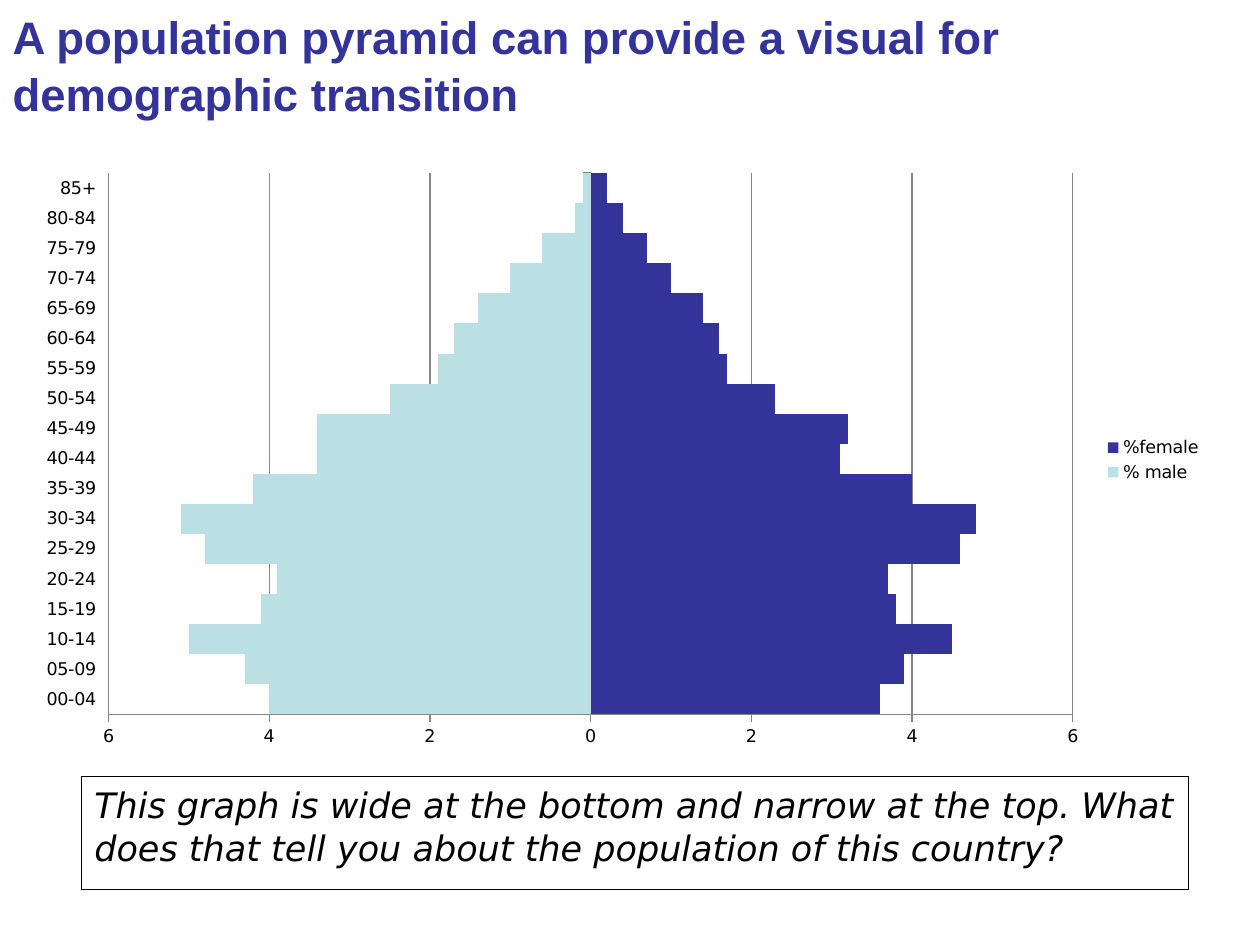
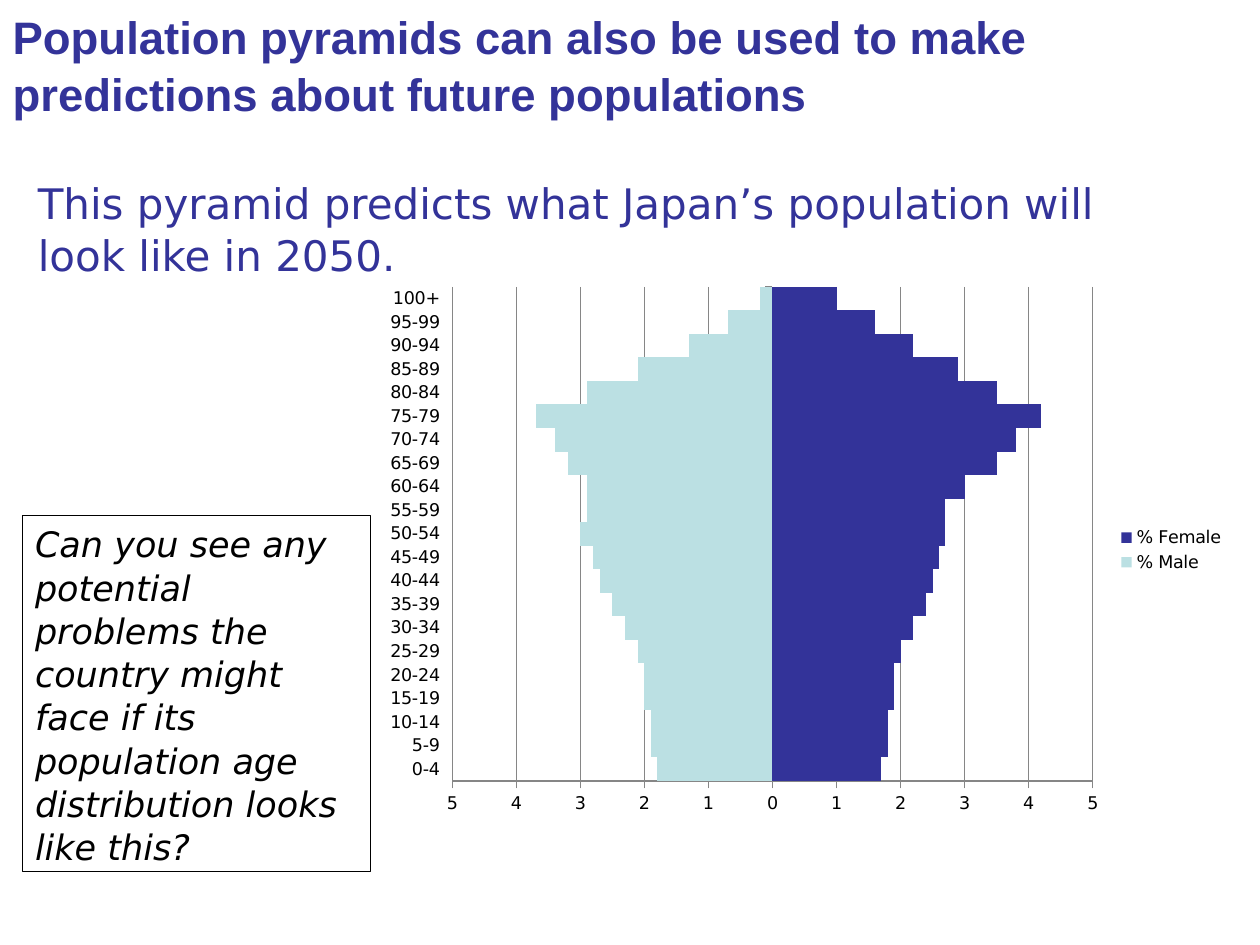
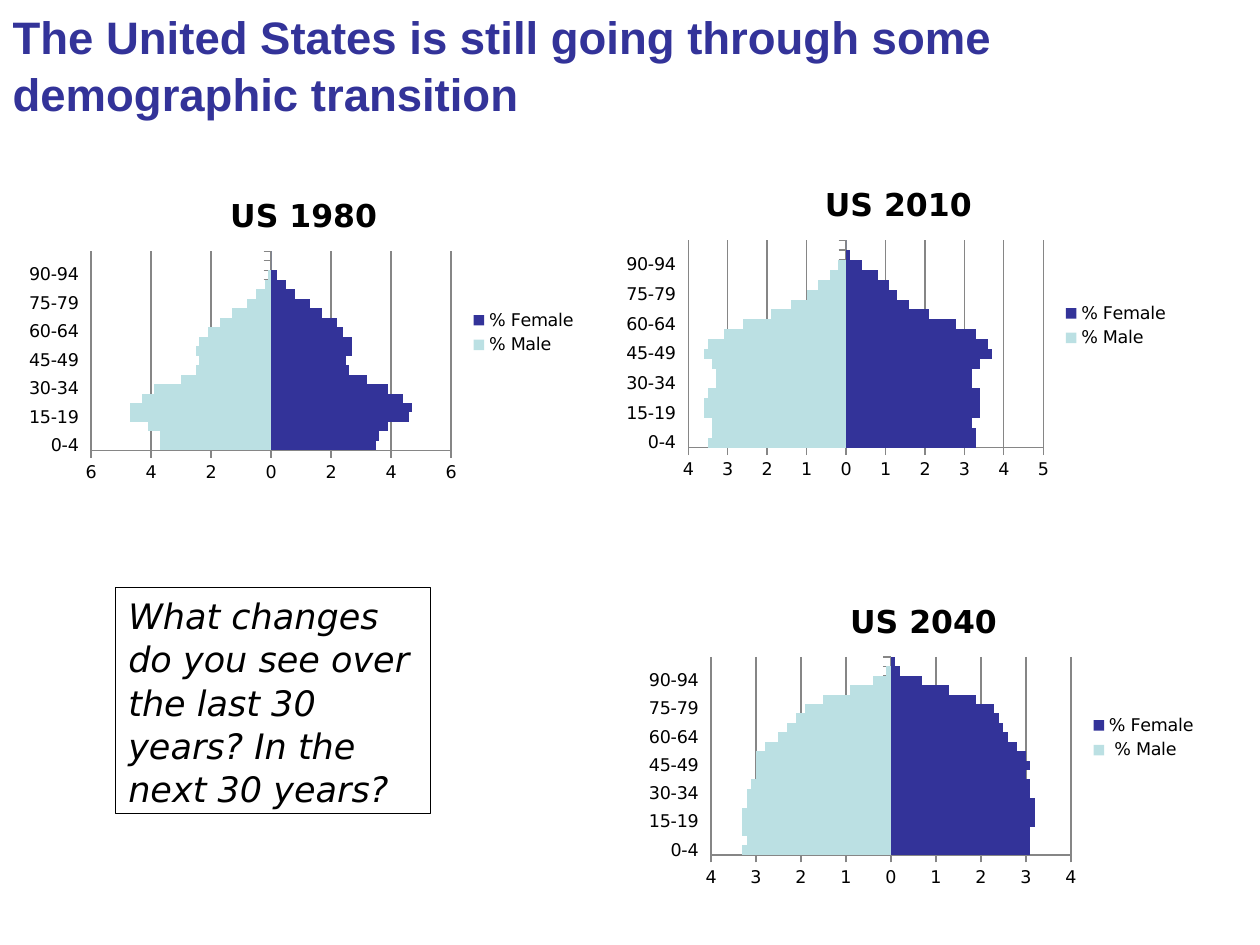
from dataclasses import dataclass

from pptx import Presentation
from pptx import util as u
from pptx.chart.data import CategoryChartData
from pptx.dml.color import RGBColor
from pptx.enum import chart as ch, shapes, text


@dataclass(frozen=True)
class Theme:
    navy: RGBColor = RGBColor(0x33, 0x33, 0x99)
    pale: RGBColor = RGBColor(0xBB, 0xE0, 0xE3)
    black: RGBColor = RGBColor(0, 0, 0)
    grid: RGBColor = RGBColor(0x86, 0x86, 0x86)
    head_font: str = "Arial"
    body_font: str = "DejaVu Sans"
    title_size: int = 26
    lead_size: int = 24
    question_size: int = 20
    chart_title_size: int = 18
    chart_size: int = 10


THEME = Theme()
TITLE_ONLY, TITLE_AND_BODY = 5, 1
TITLE_AREA = (0, 0, 10, 0.86)

TITLE = dict(name=THEME.head_font, size=u.Pt(THEME.title_size), bold=True, color=THEME.navy)
LEAD = dict(name=THEME.body_font, size=u.Pt(THEME.lead_size), color=THEME.navy)
QUESTION = dict(name=THEME.body_font, size=u.Pt(THEME.question_size), italic=True, color=THEME.black)
CHART_TEXT = dict(name=THEME.body_font, size=u.Pt(THEME.chart_size), color=THEME.black)
CHART_TITLE = dict(CHART_TEXT, size=u.Pt(THEME.chart_title_size), bold=True)


def age_groups(last, width=2):
    """Five-year groups, closed by the open group that starts at last."""
    groups = [f"{age:0{width}}-{age + 4:0{width}}" for age in range(0, last, 5)]
    return groups + [f"{last}+"]


def style_font(font, style):
    for name, value in style.items():
        if name == "color":
            font.color.rgb = value
        else:
            setattr(font, name, value)


def place(shape, area):
    for name, value in zip(("left", "top", "width", "height"), area):
        setattr(shape, name, u.Inches(value))


def write(shape, words, style, line_spacing):
    frame = shape.text_frame
    frame.word_wrap = True
    frame.auto_size = text.MSO_AUTO_SIZE.NONE
    frame.vertical_anchor = text.MSO_ANCHOR.TOP
    para = frame.paragraphs[0]
    para.alignment = text.PP_ALIGN.LEFT
    para.space_before = u.Pt(0)
    para.line_spacing = line_spacing
    span = para.add_run()
    span.text = words
    style_font(span.font, style)
    return para


def add_page(deck, title, layout=TITLE_ONLY):
    page = deck.slides.add_slide(deck.slide_layouts[layout])
    place(page.shapes.title, TITLE_AREA)
    write(page.shapes.title, title, TITLE, 1.05)
    return page


def add_lead(page, area, words):
    body = page.placeholders[1]
    place(body, area)
    para = write(body, words, LEAD, 1.04)
    props = para._p.get_or_add_pPr()
    props.set("marL", "0")
    props.set("indent", "0")
    props.insert_element_before(
        props.makeelement("{http://schemas.openxmlformats.org/drawingml/2006/main}buNone", {}),
        "a:tabLst", "a:defRPr", "a:extLst")


def add_question(page, area, words):
    box = page.shapes.add_shape(shapes.MSO_SHAPE.RECTANGLE, *map(u.Inches, area))
    box.shadow.inherit = False
    box.fill.background()
    box.line.color.rgb = THEME.black
    box.line.width = u.Pt(0.5)
    write(box, words, QUESTION, 1.03)


def style_axis(axis):
    axis.major_tick_mark = ch.XL_TICK_MARK.OUTSIDE
    axis.minor_tick_mark = ch.XL_TICK_MARK.NONE
    axis.format.line.color.rgb = THEME.grid
    axis.format.line.width = u.Pt(0.75)
    style_font(axis.tick_labels.font, CHART_TEXT)


def add_pyramid(page, area, ages, male, female, scale, names=("% Male", "% Female"), title=None):
    """Draw males to the left of zero; scale is (minimum, maximum, step)."""
    data = CategoryChartData(number_format="0.0")
    data.categories = ages
    data.add_series(names[0], [-share for share in male])
    data.add_series(names[1], female)
    chart = page.shapes.add_chart(ch.XL_CHART_TYPE.BAR_CLUSTERED, *map(u.Inches, area), data).chart
    style_font(chart.font, CHART_TEXT)

    chart.has_title = title is not None
    if title:
        span = chart.chart_title.text_frame.paragraphs[0].add_run()
        span.text = title
        style_font(span.font, CHART_TITLE)
        chart.chart_title.include_in_layout = False

    chart.has_legend = True
    chart.legend.position = ch.XL_LEGEND_POSITION.RIGHT
    chart.legend.include_in_layout = False
    style_font(chart.legend.font, CHART_TEXT)

    plot = chart.plots[0]
    plot.gap_width, plot.overlap, plot.vary_by_categories = 0, 100, False
    for series, color in zip(plot.series, (THEME.pale, THEME.navy)):
        series.invert_if_negative = False
        series.format.fill.solid()
        series.format.fill.fore_color.rgb = color

    style_axis(chart.category_axis)
    chart.category_axis.tick_label_position = ch.XL_TICK_LABEL_POSITION.LOW
    values = chart.value_axis
    style_axis(values)
    values.minimum_scale, values.maximum_scale, values.major_unit = scale
    values.tick_labels.number_format = "0;0"
    values.tick_labels.number_format_is_linked = False
    values.has_major_gridlines = True
    values.major_gridlines.format.line.color.rgb = THEME.grid
    values.major_gridlines.format.line.width = u.Pt(0.75)


def add_transition_page(deck):
    page = add_page(deck, "A population pyramid can provide a visual for demographic transition")
    add_question(page, (0.65, 6.16, 8.78, 0.9),
                 "This graph is wide at the bottom and narrow at the top. "
                 "What does that tell you about the population of this country?")
    add_pyramid(
        page, (0.18, 1.28, 9.46, 4.74), age_groups(85),
        [4, 4.3, 5, 4.1, 3.9, 4.8, 5.1, 4.2, 3.4, 3.4, 2.5, 1.9, 1.7, 1.4, 1, 0.6, 0.2, 0.1],
        [3.6, 3.9, 4.5, 3.8, 3.7, 4.6, 4.8, 4, 3.1, 3.2, 2.3, 1.7, 1.6, 1.4, 1, 0.7, 0.4, 0.2],
        (-6, 6, 2), names=("% male", "%female"))


def add_japan_page(deck):
    page = add_page(deck, "Population pyramids can also be used to make predictions about future populations",
                    TITLE_AND_BODY)
    add_lead(page, (0.2, 1.34, 9.36, 4.48),
             "This pyramid predicts what Japan’s population will look like in 2050.")
    add_question(page, (0.18, 4.09, 2.76, 2.83),
                 "Can you see any potential problems the country might face "
                 "if its population age distribution looks like this?")
    add_pyramid(
        page, (2.96, 2.19, 6.86, 4.35), age_groups(100, 1),
        [1.8, 1.9, 1.9, 2, 2, 2.1, 2.3, 2.5, 2.7, 2.8, 3, 2.9, 2.9, 3.2, 3.4, 3.7, 2.9, 2.1, 1.3, 0.7, 0.2],
        [1.7, 1.8, 1.8, 1.9, 1.9, 2, 2.2, 2.4, 2.5, 2.6, 2.7, 2.7, 3, 3.5, 3.8, 4.2, 3.5, 2.9, 2.2, 1.6, 1],
        (-5, 5, 1))


def add_us_page(deck):
    page = add_page(deck, "The United States is still going through some demographic transition")
    add_question(page, (0.92, 4.66, 2.5, 1.8),
                 "What changes do you see over the last 30 years? In the next 30 years?")
    ages = age_groups(100, 1)
    add_pyramid(
        page, (0.14, 1.4, 4.54, 2.48), ages,
        [3.7, 3.7, 4.1, 4.7, 4.7, 4.3, 3.9, 3, 2.5, 2.4, 2.5, 2.4, 2.1, 1.7, 1.3, 0.8, 0.5, 0.2, 0.1, 0, 0],
        [3.5, 3.6, 3.9, 4.6, 4.7, 4.4, 3.9, 3.2, 2.6, 2.5, 2.7, 2.7, 2.4, 2.2, 1.7, 1.3, 0.8, 0.5, 0.2, 0, 0],
        (-6, 6, 2), title="US 1980")
    add_pyramid(
        page, (4.88, 1.31, 4.5, 2.55), ages,
        [3.5, 3.4, 3.4, 3.6, 3.6, 3.5, 3.3, 3.3, 3.4, 3.6, 3.5, 3.1, 2.6, 1.9, 1.4, 1, 0.7, 0.4, 0.2, 0, 0],
        [3.3, 3.3, 3.2, 3.4, 3.4, 3.4, 3.2, 3.2, 3.4, 3.7, 3.6, 3.3, 2.8, 2.1, 1.6, 1.3, 1.1, 0.8, 0.4, 0.1, 0],
        (-4, 5, 1), title="US 2010")
    add_pyramid(
        page, (5.06, 4.62, 4.54, 2.47), ages,
        [3.3, 3.2, 3.3, 3.3, 3.3, 3.2, 3.2, 3.1, 3, 3, 3, 2.8, 2.5, 2.3, 2.1, 1.9, 1.5, 0.9, 0.4, 0.1, 0],
        [3.1, 3.1, 3.1, 3.2, 3.2, 3.2, 3.1, 3.1, 3, 3.1, 3, 2.8, 2.6, 2.5, 2.4, 2.3, 1.9, 1.3, 0.7, 0.2, 0.1],
        (-4, 4, 1), names=(" % Male", "% Female"), title="US 2040")


def main():
    deck = Presentation()
    deck.slide_width, deck.slide_height = u.Inches(10), u.Inches(7.5)
    add_transition_page(deck)
    add_japan_page(deck)
    add_us_page(deck)
    deck.save("out.pptx")


if __name__ == "__main__":
    main()
